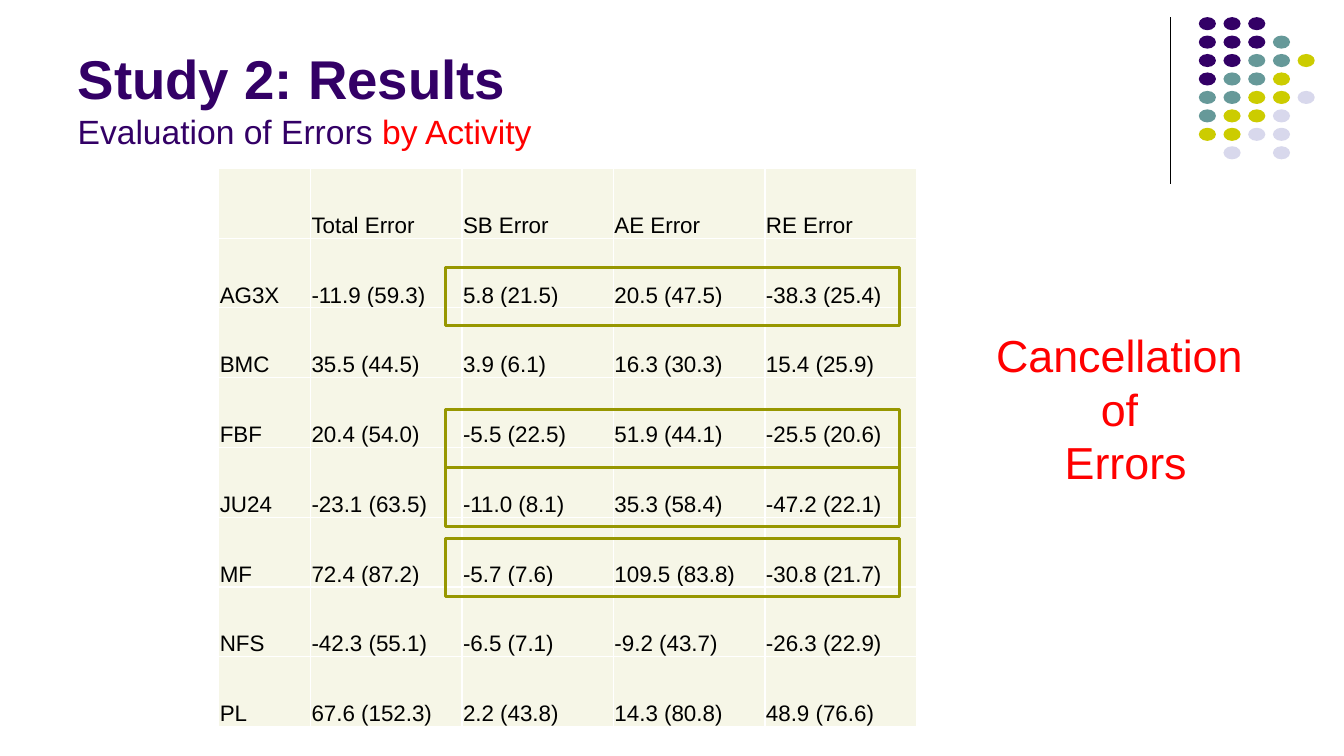
from lxml import etree
from pptx import Presentation
from pptx import util as u
from pptx.dml.color import RGBColor
from pptx.enum import shapes, text
from pptx.oxml import ns

HUES = {"ink": "330066", "teal": "669999", "lime": "CCCC00", "pale": "D8D8EC",
        "black": "000000", "white": "FFFFFF", "red": "FF0000",
        "cream": "F6F6E7", "olive": "979700"}
DOTS = ["iii", "iiit", "iittl", "ittl", "ttllp", "tllp", "llpp", " p p"]
KEYS = {"i": "ink", "t": "teal", "l": "lime", "p": "pale"}
ROWS = [
    ["", "Total Error", "SB Error", "AE Error", "RE Error"],
    ["AG3X", "-11.9 (59.3)", "5.8 (21.5)", "20.5 (47.5)", "-38.3 (25.4)"],
    ["BMC", "35.5 (44.5)", "3.9 (6.1)", "16.3 (30.3)", "15.4 (25.9)"],
    ["FBF", "20.4 (54.0)", "-5.5 (22.5)", "51.9 (44.1)", "-25.5 (20.6)"],
    ["JU24", "-23.1 (63.5)", "-11.0 (8.1)", "35.3 (58.4)", "-47.2 (22.1)"],
    ["MF", "72.4 (87.2)", "-5.7 (7.6)", "109.5 (83.8)", "-30.8 (21.7)"],
    ["NFS", "-42.3 (55.1)", "-6.5 (7.1)", "-9.2 (43.7)", "-26.3 (22.9)"],
    ["PL", "67.6 (152.3)", "2.2 (43.8)", "14.3 (80.8)", "48.9 (76.6)"],
]


def hue(name):
    return RGBColor.from_string(HUES[name])


def inches(*box):
    return [u.Inches(n) for n in box]


def add_run(para, words, size, color, bold=False):
    run = para.add_run()
    run.text = words
    font = run.font
    font.name, font.size, font.bold = "Arial", u.Pt(size), bold
    font.color.rgb = hue(color)


def add_rule(slide, x, top, end):
    rule = slide.shapes.add_connector(
        shapes.MSO_CONNECTOR.STRAIGHT, *inches(x, top, x, end))
    rule.line.color.rgb = hue("black")
    rule.line.width = u.Pt(0.75)
    etree.SubElement(rule._element.spPr, ns.qn("a:effectLst"))


def add_dots(slide, left, top):
    group = slide.shapes.add_group_shape()
    for row, marks in enumerate(DOTS):
        for col, mark in enumerate(marks):
            if mark == " ":
                continue
            dot = group.shapes.add_shape(
                shapes.MSO_SHAPE.OVAL,
                *inches(left + col * 0.245, top + row * 0.183, 0.17, 0.13))
            dot.shadow.inherit = False
            dot.fill.solid()
            dot.fill.fore_color.rgb = hue(KEYS[mark])
            dot.line.fill.background()


def add_title(slide, box):
    title = slide.shapes.title
    title.left, title.top, title.width, title.height = inches(*box)
    frame = title.text_frame
    frame.word_wrap = True
    frame.auto_size = text.MSO_AUTO_SIZE.NONE
    frame.vertical_anchor = text.MSO_ANCHOR.BOTTOM
    para = frame.paragraphs[0]
    para.alignment = text.PP_ALIGN.LEFT
    add_run(para, "Study 2: Results", 39, "ink", True)
    para.add_line_break()
    add_run(para, "Evaluation of Errors ", 24, "ink")
    add_run(para, "by Activity", 24, "red")


def add_edges(cell):
    props = cell._tc.get_or_add_tcPr()
    for spot, side in enumerate(("lnL", "lnR", "lnT", "lnB")):
        edge = etree.Element(ns.qn("a:" + side), w=str(u.Pt(1)))
        fill = etree.SubElement(edge, ns.qn("a:solidFill"))
        etree.SubElement(fill, ns.qn("a:srgbClr"), val=HUES["white"])
        props.insert(spot, edge)


def add_grid(slide, box):
    left, top, width, height = box
    grid = slide.shapes.add_table(len(ROWS), len(ROWS[0]), *inches(*box)).table
    first = 0.91
    for col, column in enumerate(grid.columns):
        column.width = u.Inches((width - first) / 4 if col else first)
    for row, words in enumerate(ROWS):
        grid.rows[row].height = u.Inches(height / len(ROWS))
        for col, word in enumerate(words):
            cell = grid.cell(row, col)
            cell.margin_left = cell.margin_right = cell.margin_top = u.Inches(0.01)
            cell.margin_bottom = 0
            cell.vertical_anchor = text.MSO_ANCHOR.BOTTOM
            cell.fill.solid()
            cell.fill.fore_color.rgb = hue("cream")
            add_edges(cell)
            para = cell.text_frame.paragraphs[0]
            para.font.size = u.Pt(16)
            if word:
                add_run(para, word, 16, "black")


def add_frames(slide, left, width, height, tops):
    for top in tops:
        frame = slide.shapes.add_shape(
            shapes.MSO_SHAPE.RECTANGLE, *inches(left, top, width, height))
        frame.shadow.inherit = False
        frame.fill.background()
        frame.line.color.rgb = hue("olive")
        frame.line.width = u.Pt(2)


def add_note(slide, box):
    frame = slide.shapes.add_textbox(*inches(*box)).text_frame
    frame.word_wrap = False
    frame.auto_size = text.MSO_AUTO_SIZE.SHAPE_TO_FIT_TEXT
    for row, words in enumerate(("Cancellation ", "of ", "Errors")):
        para = frame.add_paragraph() if row else frame.paragraphs[0]
        para.alignment = text.PP_ALIGN.CENTER
        add_run(para, words, 32, "red")


def main():
    deck = Presentation()
    deck.slide_width, deck.slide_height = inches(13.33, 7.5)
    slide = deck.slides.add_slide(deck.slide_layouts[5])
    add_rule(slide, 11.61, 0.17, 1.83)
    add_dots(slide, 11.89, 0.17)
    add_grid(slide, (2.17, 1.67, 6.92, 5.54))
    add_note(slide, (9.77, 3.2, 2.79, 1.72))
    add_title(slide, (0.67, 0.13, 11, 1.42))
    add_frames(slide, 4.42, 4.5, 0.58, (2.65, 4.64, 4.06, 5.34))
    deck.save("out.pptx")


if __name__ == "__main__":
    main()
